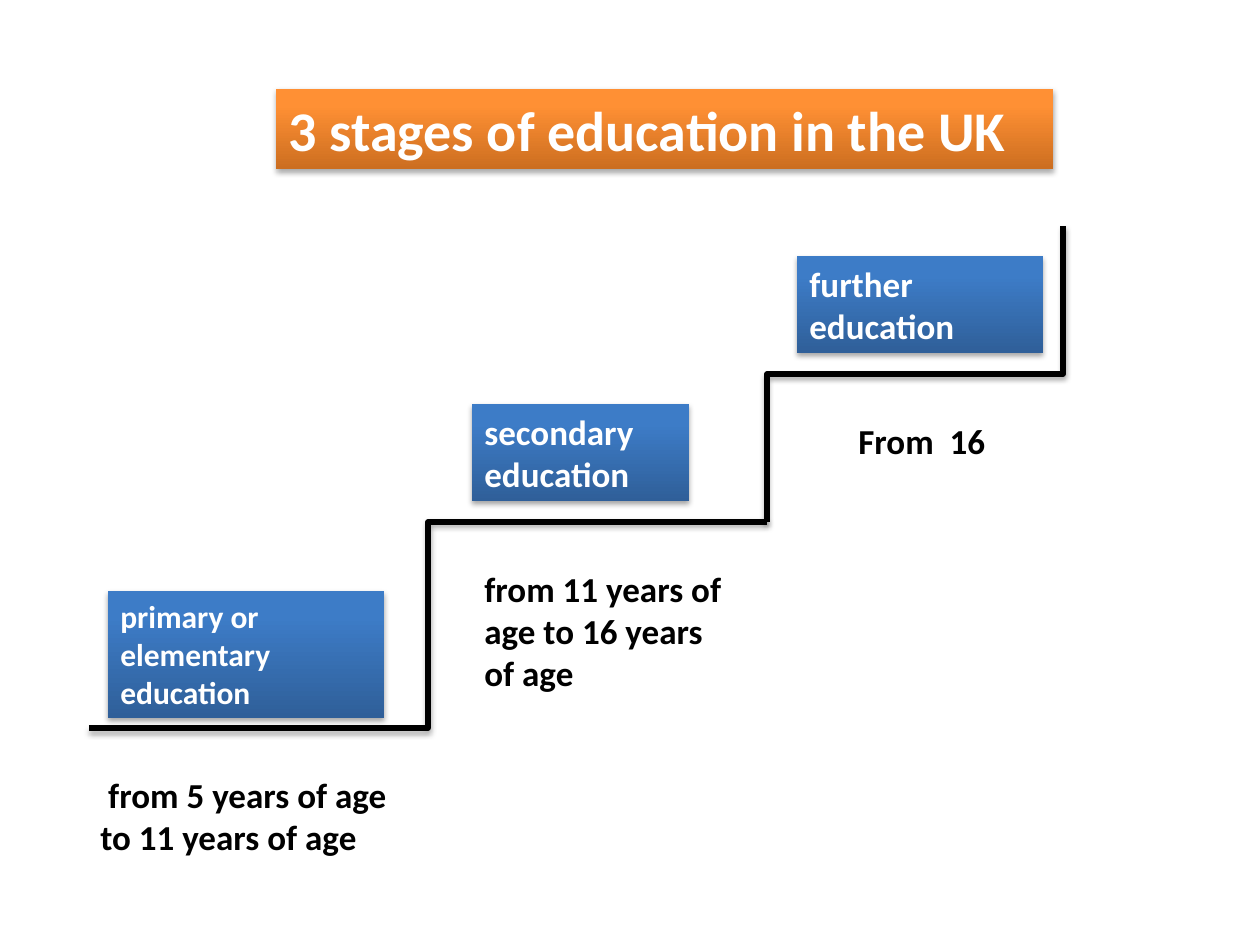
import pptx
import pptx.dml.color
import pptx.enum.shapes
import pptx.enum.text
import pptx.oxml
import pptx.oxml.ns
import pptx.util

PX = 7257  # EMU per pixel, 126 px to the inch
SHADOW = (
    '<a:effectLst %s><a:outerShdw blurRad="40000" dist="23000" dir="5400000" rotWithShape="0">'
    '<a:srgbClr val="000000"><a:alpha val="35000"/></a:srgbClr></a:outerShdw></a:effectLst>'
    % pptx.oxml.ns.nsdecls("a"))


def rgb(value):
    return pptx.dml.color.RGBColor.from_string(value)


def write(shape, text, size=20, color="000000", wrap=True):
    frame = shape.text_frame
    frame.word_wrap = wrap
    frame.auto_size = pptx.enum.text.MSO_AUTO_SIZE.NONE
    frame.vertical_anchor = pptx.enum.text.MSO_ANCHOR.TOP
    frame.text = text
    paragraph = frame.paragraphs[0]
    paragraph.alignment = pptx.enum.text.PP_ALIGN.LEFT
    font = paragraph.runs[0].font
    font.name = "Calibri"
    font.size = pptx.util.Pt(size)
    font.bold = True
    font.color.rgb = rgb(color)


deck = pptx.Presentation()
deck.slide_width = pptx.util.Inches(10)
deck.slide_height = pptx.util.Inches(7.5)
slide = deck.slides.add_slide(deck.slide_layouts[5])

# Title banner
title = slide.shapes.title
title.left, title.top, title.width, title.height = 276 * PX, 89 * PX, 777 * PX, 80 * PX
write(title, "3 stages of education in the UK", size=32, color="FFFFFF")
banners = [(title, "CC6E20", "FF9034")]

# Staircase: the upper half is a quarter turn of the same elbow
ELBOW = pptx.enum.shapes.MSO_CONNECTOR.ELBOW
lower_steps = slide.shapes.add_connector(ELBOW, 89 * PX, 728 * PX, 767 * PX, 522 * PX)
upper_steps = slide.shapes.add_connector(ELBOW, 1063 * PX, 522 * PX, 767 * PX, 226 * PX)
upper_steps._element.spPr.find(pptx.oxml.ns.qn("a:xfrm")).set("rot", "5400000")
for steps in (lower_steps, upper_steps):
    steps.line.color.rgb = rgb("000000")
    steps.line.width = pptx.util.Pt(3)
    steps._element.spPr.append(pptx.oxml.parse_xml(SHADOW))

# Stage names standing on the steps
stages = [
    ("primary or elementary education", 18, 108, 591, 276, 127),
    ("secondary education", 20, 472, 404, 217, 97),
    ("further education", 20, 797, 256, 246, 97),
]
for name, size, left, top, width, height in stages:
    stage = slide.shapes.add_shape(
        pptx.enum.shapes.MSO_SHAPE.RECTANGLE, left * PX, top * PX, width * PX, height * PX)
    write(stage, name, size=size, color="FFFFFF")
    banners.append((stage, "2F5F99", "3D7CC7"))

# Gradient, dark at the bottom, and shadow of all banners
for banner, dark, light in banners:
    banner.fill.gradient()
    banner.fill.gradient_angle = 90
    for stop, position, color in zip(banner.fill.gradient_stops, (0, 0.8), (dark, light)):
        stop.position = position
        stop.color.rgb = rgb(color)
    banner.line.fill.background()
    banner._element.spPr.append(pptx.oxml.parse_xml(SHADOW))

# Ages under the steps
ages = [
    (" from 5 years of age to 11 years of age", 88, 767, 315, 97, True),
    ("from 11 years of age to 16 years of age", 472, 561, 266, 140, True),
    ("From  16", 846, 413, 154, 55, False),
]
for span, left, top, width, height, wrap in ages:
    age = slide.shapes.add_textbox(left * PX, top * PX, width * PX, height * PX)
    write(age, span, wrap=wrap)

deck.save("out.pptx")
